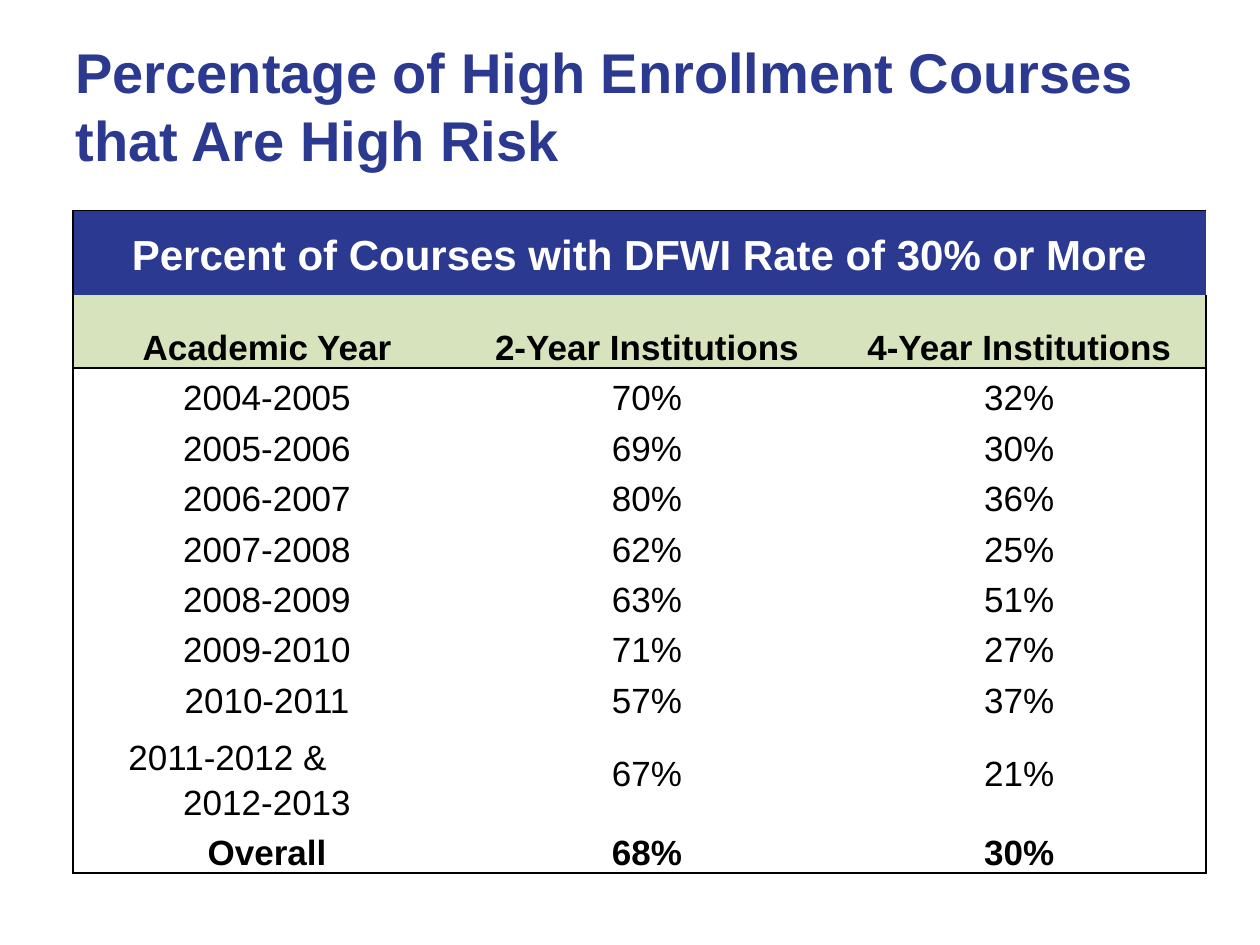
from pptx import Presentation
from pptx.dml.color import RGBColor
from pptx.enum.text import MSO_ANCHOR as Anchor, PP_ALIGN as Align
from pptx.oxml.ns import qn
from pptx.util import Inches, Pt
from lxml.etree import Element, SubElement

NAVY = RGBColor(0x2B, 0x39, 0x90)
GREEN = RGBColor(0xD6, 0xE3, 0xBC)
WHITE = RGBColor(0xFF, 0xFF, 0xFF)
BLACK = RGBColor(0, 0, 0)

COLS = [3.08, 2.95, 2.96]
ROW = 0.4
HEIGHTS = [0.67, 0.58] + [ROW] * 7 + [0.81, ROW]
SPLIT_YEAR = 9
ROWS = [
    ("Percent of Courses with DFWI Rate of 30% or More", "", ""),
    ("Academic Year", "2-Year Institutions", "4-Year Institutions"),
    ("2004-2005", "70%", "32%"),
    ("2005-2006", "69%", "30%"),
    ("2006-2007", "80%", "36%"),
    ("2007-2008", "62%", "25%"),
    ("2008-2009", "63%", "51%"),
    ("2009-2010", "71%", "27%"),
    ("2010-2011", "57%", "37%"),
    ("2011-2012 &\n2012-2013", "67%", "21%"),
    ("Overall", "68%", "30%"),
]


def write(tf, text, size=20, bold=False, color=BLACK, align=Align.CENTER, spacing=None):
    """Write each line of text as one paragraph."""
    for i, line in enumerate(text.split("\n")):
        p = tf.add_paragraph() if i else tf.paragraphs[0]
        p.alignment, p.line_spacing = align, spacing
        r = p.add_run()
        r.text = line
        f = r.font
        f.name, f.size, f.bold = "Arial", Pt(size), bold
        f.color.rgb = color


def set_borders(cell, sides):
    """Rule the given sides (of L, R, T, B) in black and clear the others."""
    tc_pr = cell._tc.get_or_add_tcPr()
    for i, side in enumerate("LRTB"):
        ln = Element(qn(f"a:ln{side}"), w=str(Pt(1)))
        if side in sides:
            fill = SubElement(ln, qn("a:solidFill"))
            SubElement(fill, qn("a:srgbClr"), val=str(BLACK))
        else:
            SubElement(ln, qn("a:noFill"))
        tc_pr.insert(i, ln)


def sides_of(row, col):
    """Outer frame, plus a rule under the column headings."""
    last = len(ROWS) - 1
    tests = {"L": col == 0, "R": col == len(COLS) - 1,
             "T": row in (0, 2), "B": row in (1, last)}
    return [side for side, ruled in tests.items() if ruled]


def fill_cell(cell, row, col):
    cell.margin_left = cell.margin_right = Inches(0.07)
    cell.margin_top = cell.margin_bottom = 0
    middle = row == 0 or (row == SPLIT_YEAR and col > 0)
    cell.vertical_anchor = Anchor.MIDDLE if middle else Anchor.BOTTOM
    if row < 2:
        cell.fill.solid()
        cell.fill.fore_color.rgb = (NAVY, GREEN)[row]
    else:
        cell.fill.background()
    set_borders(cell, sides_of(row, col))
    if ROWS[row][col]:
        write(cell.text_frame, ROWS[row][col], size=20 if row else 24,
              bold=row in (0, 1, len(ROWS) - 1),
              color=BLACK if row else WHITE, spacing=1.15)


def add_rates_table(s):
    table = s.shapes.add_table(len(ROWS), len(COLS), Inches(0.58), Inches(1.67),
                               Inches(sum(COLS)), Inches(sum(HEIGHTS))).table
    table.first_row = table.horz_banding = False
    for column, width in zip(table.columns, COLS):
        column.width = Inches(width)
    for row, height in zip(table.rows, HEIGHTS):
        row.height = Inches(height)
    for row in range(len(ROWS)):
        for col in range(len(COLS)):
            fill_cell(table.cell(row, col), row, col)
    table.cell(0, 0).merge(table.cell(0, len(COLS) - 1))

    # The first line of the split year hangs out to the left
    p = table.cell(SPLIT_YEAR, 0).text_frame.paragraphs[0]
    p.alignment = Align.LEFT
    p._p.get_or_add_pPr().set("marL", str(Inches(0.37)))


def add_title(s, text):
    tf = s.shapes.add_textbox(Inches(0.5), Inches(0.17), Inches(9.5), Inches(1.33)).text_frame
    tf.word_wrap = True
    tf.vertical_anchor = Anchor.MIDDLE
    write(tf, text, size=32, bold=True, color=NAVY, align=Align.LEFT)


def main():
    prs = Presentation()
    prs.slide_width, prs.slide_height = Inches(10), Inches(7.5)
    s = prs.slides.add_slide(prs.slide_layouts[6])
    add_rates_table(s)
    add_title(s, "Percentage of High Enrollment Courses that Are High Risk")
    prs.save("out.pptx")


if __name__ == "__main__":
    main()
